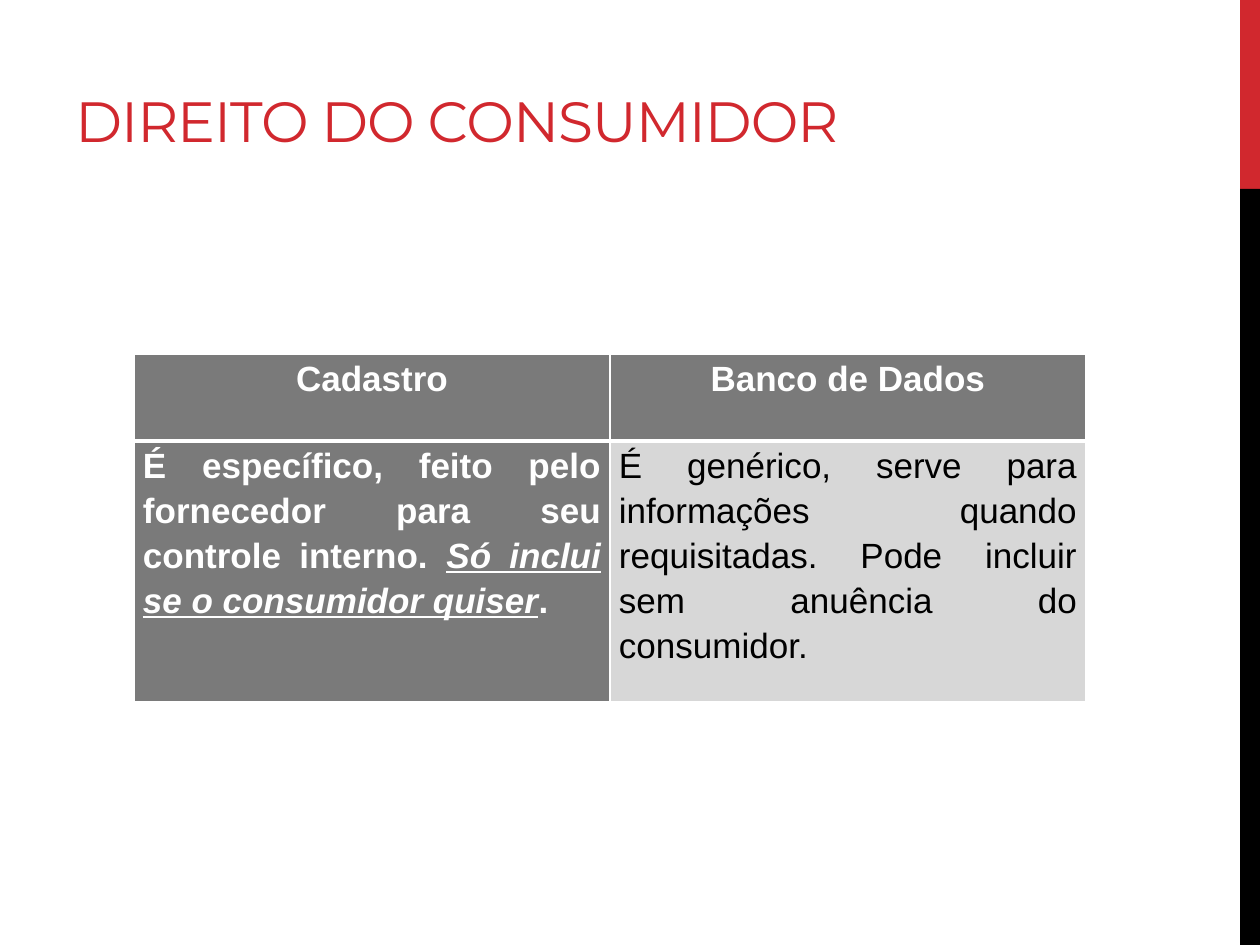
from lxml import etree
from pptx import Presentation
from pptx.dml.color import RGBColor
from pptx.enum.shapes import MSO_SHAPE
from pptx.enum.text import MSO_ANCHOR, PP_ALIGN
from pptx.oxml.ns import qn
from pptx.util import Emu, Pt

RECTANGLE = MSO_SHAPE.RECTANGLE
BOTTOM = MSO_ANCHOR.BOTTOM
LEFT, CENTER, JUSTIFY = PP_ALIGN.LEFT, PP_ALIGN.CENTER, PP_ALIGN.JUSTIFY
PIXELS_PER_INCH = 126
COLORS = {
    "red": "D1282E",
    "black": "000000",
    "white": "FFFFFF",
    "dark": "7A7A7A",
    "light": "D7D7D7",
}
HEADERS = ["Cadastro", "Banco de Dados"]
REGISTER_RUNS = [
    ("É específico, feito pelo fornecedor para seu controle interno. ", False),
    ("Só inclui se o consumidor quiser", True),
    (".", False),
]
DATABASE_TEXT = (
    "É genérico, serve para informações quando requisitadas. "
    "Pode incluir sem anuência do consumidor."
)


def px(value):
    return Emu(round(value * 914400 / PIXELS_PER_INCH))


def color(name):
    return RGBColor.from_string(COLORS[name])


def add_text(paragraph, text, *, size=20, font="Arial", fill="white", bold=False,
             emphasis=False, align=LEFT, line_spacing=1.0, spacing=None):
    paragraph.alignment = align
    paragraph.line_spacing = line_spacing
    run = paragraph.add_run()
    run.text = text
    run.font.size = Pt(size)
    run.font.name = font
    run.font.bold = bold
    run.font.italic = emphasis
    run.font.underline = emphasis
    run.font.color.rgb = color(fill)
    if spacing is not None:
        run.font._element.set("spc", str(spacing))


def add_side_bar(slide, left, top, width, height):
    accent_height = height // 5
    parts = [(top, accent_height, "red"),
             (top + accent_height, height - accent_height, "black")]
    for part_top, part_height, fill in parts:
        shape = slide.shapes.add_shape(
            RECTANGLE, px(left), px(part_top), px(width), px(part_height))
        shape.shadow.inherit = False
        shape.fill.solid()
        shape.fill.fore_color.rgb = color(fill)
        shape.line.fill.background()


def add_title(slide, left, top, width, height):
    shape = slide.shapes.add_textbox(px(left), px(top), px(width), px(height))
    frame = shape.text_frame
    frame.word_wrap = True
    frame.vertical_anchor = BOTTOM
    add_text(frame.paragraphs[0], "DIREITO DO CONSUMIDOR", size=32.4,
             font="Montserrat", fill="red", spacing=-60)


def set_borders(cell, top, bottom):
    properties = cell._tc.get_or_add_tcPr()
    borders = [("a:lnL", 1), ("a:lnR", 1), ("a:lnT", top), ("a:lnB", bottom)]
    for index, (tag, width) in enumerate(borders):
        line = etree.Element(qn(tag), w=str(Pt(width)))
        fill = etree.SubElement(line, qn("a:solidFill"))
        etree.SubElement(fill, qn("a:srgbClr"), val=COLORS["white"])
        properties.insert(index, line)


def format_cell(cell, fill, top=1, bottom=1):
    cell.margin_left = cell.margin_right = px(9)
    cell.margin_top = cell.margin_bottom = 0
    cell.fill.solid()
    cell.fill.fore_color.rgb = color(fill)
    set_borders(cell, top, bottom)


def add_comparison(slide, left, top, width, height):
    table = slide.shapes.add_table(
        2, 2, px(left), px(top), px(width), px(height)).table
    header_height = height // 4
    table.rows[0].height = px(header_height)
    table.rows[1].height = px(height - header_height)
    for column, header in enumerate(HEADERS):
        cell = table.cell(0, column)
        format_cell(cell, "dark", bottom=3)
        add_text(cell.text_frame.paragraphs[0], header, bold=True,
                 align=CENTER, line_spacing=1.15)

    register, database = table.cell(1, 0), table.cell(1, 1)
    format_cell(register, "dark", top=3)
    format_cell(database, "light", top=3)
    for text, emphasis in REGISTER_RUNS:
        add_text(register.text_frame.paragraphs[0], text, bold=True,
                 emphasis=emphasis, align=JUSTIFY, line_spacing=1.15)
    add_text(database.text_frame.paragraphs[0], DATABASE_TEXT, fill="black",
             align=JUSTIFY, line_spacing=1.15)


def main():
    presentation = Presentation()
    presentation.slide_width = px(1260)
    presentation.slide_height = px(945)
    slide = presentation.slides.add_slide(presentation.slide_layouts[6])
    add_side_bar(slide, 1240, 0, 20, 945)
    add_title(slide, 63, 76, 1113, 84)
    add_comparison(slide, 134, 354, 952, 348)
    presentation.save("out.pptx")


if __name__ == "__main__":
    main()
